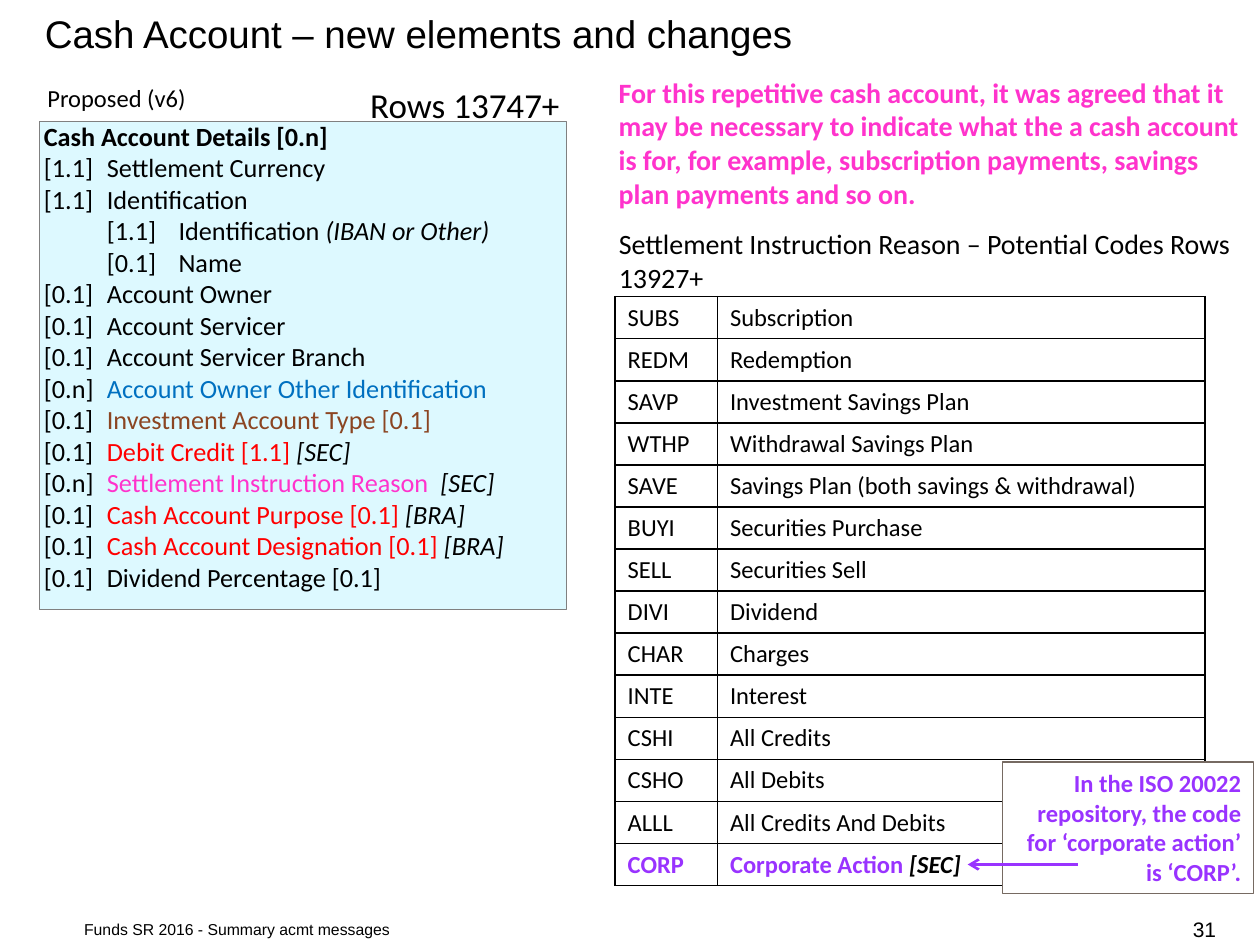
from dataclasses import dataclass, field

from lxml.etree import SubElement
from pptx import Presentation
from pptx.dml.color import RGBColor
from pptx.enum.shapes import MSO_CONNECTOR, MSO_SHAPE
from pptx.enum.text import MSO_ANCHOR, PP_ALIGN
from pptx.oxml.ns import qn
from pptx.util import Pt


@dataclass
class Theme:
    head: str = "Arial"
    body: str = "Calibri"
    sizes: dict = field(default_factory=lambda: dict(
        title=22, rows=20, note=16, list=15, text=14, page=12, foot=9))
    colors: dict = field(default_factory=lambda: dict(
        black="000000", white="FFFFFF", pale="DDF9FF", gray="808080",
        stone="766A62", blue="0070C0", brown="8B4522", red="FF0000",
        pink="FF33CC", violet="9933FF"))

    def color(self, name):
        return RGBColor.from_string(self.colors[name])


class Painter:
    def __init__(self, slide, theme):
        self.slide = slide
        self.theme = theme

    def runs(self, para, parts, size, font=None, **base):
        for part in [parts] if isinstance(parts, str) else parts:
            text, extra = (part, {}) if isinstance(part, str) else part
            look = {"color": "black", **base, **extra}
            run = para.add_run()
            run.text = text
            run.font.color.rgb = self.theme.color(look.pop("color"))
            look.update(name=font or self.theme.body,
                        size=Pt(self.theme.sizes[size]))
            for key, value in look.items():
                setattr(run.font, key, value)

    def fill_text(self, frame, lines, size, wrap=True, anchor=MSO_ANCHOR.TOP,
                  align=PP_ALIGN.LEFT, tabs=(), **look):
        for key, value in dict(word_wrap=wrap, vertical_anchor=anchor).items():
            setattr(frame, key, value)
        for index, parts in enumerate(lines):
            para = frame.add_paragraph() if index else frame.paragraphs[0]
            para.alignment = align
            if tabs:
                stops = SubElement(para._p.get_or_add_pPr(), qn("a:tabLst"))
                for stop in tabs:
                    SubElement(stops, qn("a:tab"), pos=str(Pt(stop)), algn="l")
            self.runs(para, parts, size, **look)

    def text(self, spot, lines, size, **look):
        box = self.slide.shapes.add_textbox(*map(Pt, spot))
        self.fill_text(box.text_frame, lines, size, **look)

    def panel(self, spot, fill, line=None, width=0.5):
        shape = self.slide.shapes.add_shape(MSO_SHAPE.RECTANGLE, *map(Pt, spot))
        shape.shadow.inherit = False
        shape.fill.solid()
        shape.fill.fore_color.rgb = self.theme.color(fill)
        if line:
            shape.line.color.rgb = self.theme.color(line)
            shape.line.width = Pt(width)
        else:
            shape.line.fill.background()
        return shape.text_frame

    def border(self, cell):
        props = cell._tc.get_or_add_tcPr()
        for side in ("lnL", "lnR", "lnT", "lnB"):
            line = SubElement(props, qn(f"a:{side}"), w=str(Pt(1)))
            solid = SubElement(line, qn("a:solidFill"))
            SubElement(solid, qn("a:srgbClr"), val=self.theme.colors["black"])

    def table(self, left, top, widths, height, rows):
        frame = self.slide.shapes.add_table(
            len(rows), len(widths), Pt(left), Pt(top),
            Pt(sum(widths)), Pt(height * len(rows)))
        grid = frame.table
        grid.first_row = grid.horz_banding = False
        for column, width in zip(grid.columns, widths):
            column.width = Pt(width)
        for row, items in zip(grid.rows, rows):
            row.height = Pt(height)
            for cell, parts in zip(row.cells, items):
                self.border(cell)
                cell.fill.solid()
                cell.fill.fore_color.rgb = self.theme.color("white")
                self.runs(cell.text_frame.paragraphs[0], parts, "text")

    def arrow(self, start, end, color):
        line = self.slide.shapes.add_connector(
            MSO_CONNECTOR.STRAIGHT, *map(Pt, (*start, *end)))
        line.line.color.rgb = self.theme.color(color)
        line.line.width = Pt(1.5)
        SubElement(line.line._get_or_add_ln(), qn("a:tailEnd"), type="arrow")
        SubElement(line._element.spPr, qn("a:effectLst"))


BLUE, BROWN, RED, PINK = (
    {"color": name} for name in ("blue", "brown", "red", "pink"))
SLANT = {"italic": True}
STRONG = {"color": "violet", "bold": True}
SEC, BRA = ("[SEC]", SLANT), ("[BRA]", SLANT)

DETAILS = [
    [("Cash Account Details [0.n]", {"bold": True})],
    "[1.1]\tSettlement Currency",
    "[1.1]\tIdentification",
    ["\t[1.1]\tIdentification ", ("(IBAN or Other)", SLANT)],
    "\t[0.1]\tName",
    "[0.1]\tAccount Owner",
    "[0.1]\tAccount Servicer",
    "[0.1]\tAccount Servicer Branch",
    ["[0.n]\t", ("Account Owner Other Identification", BLUE)],
    ["[0.1]\t", ("Investment Account Type [0.1]", BROWN)],
    ["[0.1]\t", ("Debit Credit [1.1] ", RED), SEC],
    ["[0.n]\t", ("Settlement Instruction Reason  ", PINK), SEC],
    ["[0.1]\t", ("Cash Account Purpose [0.1] ", RED), BRA],
    ["[0.1]\t", ("Cash Account Designation [0.1] ", RED), BRA],
    "[0.1]\tDividend Percentage [0.1]",
]

CODES = [
    ("SUBS", "Subscription"),
    ("REDM", "Redemption"),
    ("SAVP", "Investment Savings Plan"),
    ("WTHP", "Withdrawal Savings Plan"),
    ("SAVE", "Savings Plan (both savings & withdrawal)"),
    ("BUYI", "Securities Purchase"),
    ("SELL", "Securities Sell"),
    ("DIVI", "Dividend"),
    ("CHAR", "Charges"),
    ("INTE", "Interest"),
    ("CSHI", "All Credits"),
    ("CSHO", "All Debits"),
    ("ALLL", "All Credits And Debits"),
    ([("CORP", STRONG)],
     [("Corporate Action ", STRONG), ("[SEC]", {"bold": True, **SLANT})]),
]


def main():
    deck = Presentation()
    deck.slide_width, deck.slide_height = Pt(720), Pt(540)
    theme = Theme()
    paint = Painter(deck.slides.add_slide(deck.slide_layouts[6]), theme)
    mid = dict(font=theme.head, anchor=MSO_ANCHOR.MIDDLE)

    paint.text((18.5, 1.5, 600, 34.5),
               ["Cash Account – new elements and changes"], "title", **mid)
    paint.text((41, 522, 447, 18),
               ["Funds SR 2016 - Summary acmt messages"], "foot", **mid)
    paint.text((20, 44, 94.5, 24.5), ["Proposed (v6)"], "text", wrap=False)
    paint.panel((22.5, 69.5, 301, 279), "pale", "gray")
    paint.text((18, 65, 310, 280), DETAILS, "list", tabs=(36, 77))
    paint.table(351.5, 169.5, (58.5, 278.5), 24, CODES)
    paint.text((346.5, 126, 364.5, 46),
               ["Settlement Instruction Reason – Potential Codes Rows 13927+"],
               "note")
    remark = paint.panel((346.5, 39.5, 373.5, 85), "white")
    paint.fill_text(remark, [
        "For this repetitive cash account, it was agreed that it may be "
        "necessary to indicate what the a cash account is for, for example, "
        "subscription payments, savings plan payments and so on."],
        "note", color="pink", bold=True)
    paint.text((204.5, 44, 124, 31.5), ["Rows 13747+"], "rows", wrap=False)
    hint = paint.panel((573, 435.5, 143.5, 75), "white", "stone", 0.75)
    paint.fill_text(hint, [
        "In the ISO 20022 repository, the code for ‘corporate action’ "
        "is ‘CORP’."], "text", align=PP_ALIGN.RIGHT, **STRONG)
    paint.arrow((616, 494), (553, 494), "violet")
    paint.text((642, 522, 60, 18), ["31"], "page", align=PP_ALIGN.RIGHT, **mid)
    deck.save("out.pptx")


if __name__ == "__main__":
    main()
